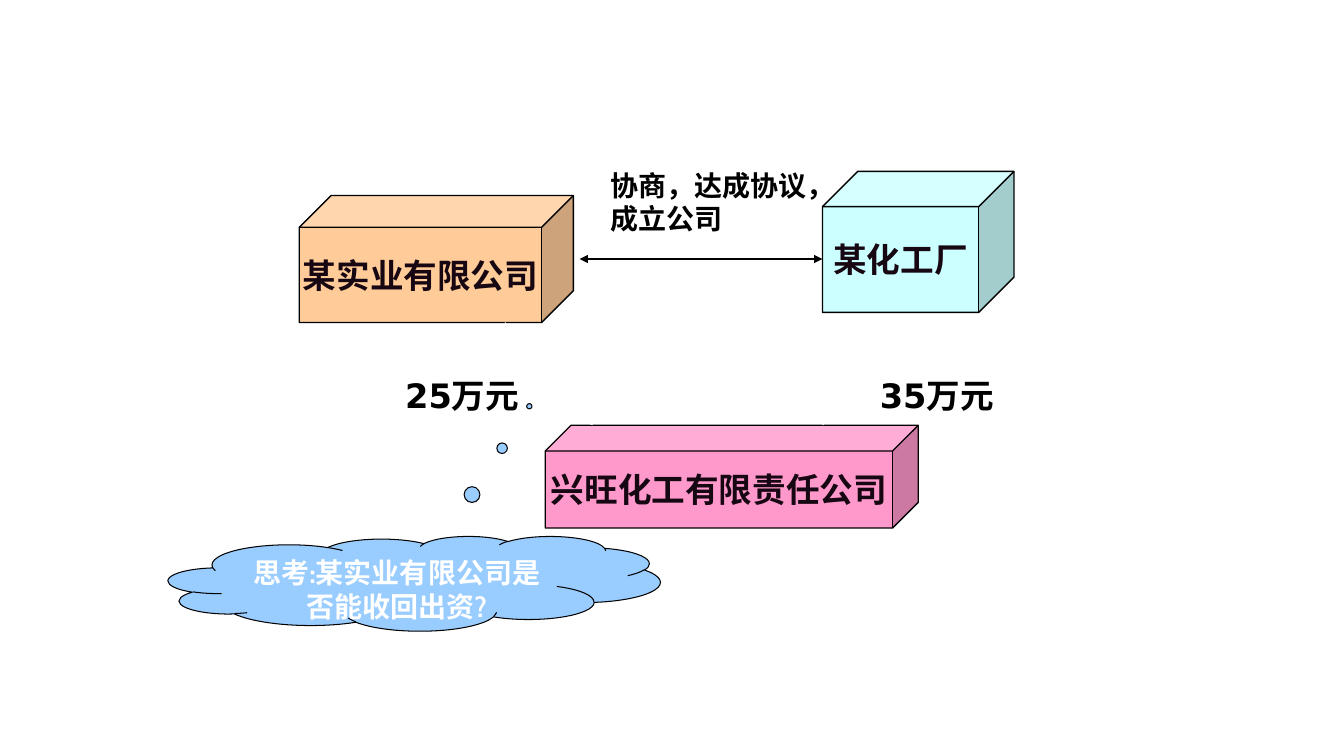
"""Build a slide on two firms that fund a new company."""
from dataclasses import dataclass
from typing import Any, Optional

from lxml import etree
from pptx import Presentation
from pptx import util as u
from pptx.dml import color
from pptx.enum import shapes, text
from pptx.oxml import ns

MID, LEFT = text.PP_ALIGN.CENTER, text.PP_ALIGN.LEFT
TOP, HALF = text.MSO_ANCHOR.TOP, text.MSO_ANCHOR.MIDDLE
CUBE, CLOUD = shapes.MSO_SHAPE.CUBE, shapes.MSO_SHAPE.CLOUD_CALLOUT
SANS, ROMAN = "DejaVu Sans", "Times New Roman"


@dataclass
class Box:
    words: str
    at: tuple[float, float, float, float]
    size: float = 24
    font: str = SANS
    ink: str = "000000"
    align: Any = MID
    kind: Any = None
    fill: str = ""
    line: float = 1
    wrap: bool = True
    anchor: Any = TOP
    adjust: tuple[float, ...] = ()


@dataclass
class Arrow:
    start: tuple[float, float]
    end: tuple[float, float]
    ink: str = "FFFFFF"
    width: float = 0.75
    ends: tuple[str, ...] = ("tailEnd",)


def firm(words: str, at: tuple[float, float, float, float], fill: str,
         font: str = ROMAN) -> Box:
    return Box(words, at, font=font, ink="170712", kind=CUBE, fill=fill,
               wrap=False, anchor=HALF, adjust=(0.25,))


FIRMS = [
    firm("某化工厂", (587.5, 122.4, 136.8, 100.8), "CCFFFF"),
    firm("某实业有限公司", (213.8, 139.7, 195.8, 90.7), "FFCC99", SANS),
    firm("兴旺化工有限责任公司", (389.5, 303.8, 266.4, 73.4), "FF99CC"),
]
ARROWS = [
    Arrow((360.7, 230.4), (423.4, 303.8)),
    Arrow((638.6, 224.6), (587.5, 303.8)),
    Arrow((414, 185), (587.5, 185), "000000", 1.5, ("headEnd", "tailEnd")),
]
NOTES = [
    Box("25万元", (270, 264.2, 120.2, 36)),
    Box("协商，达成协议，成立公司", (429.1, 116.6, 157, 55.4), 20, align=LEFT),
    Box("35万元", (621.4, 264.2, 103, 36), align=LEFT),
    Box("思考:某实业有限公司是否能收回出资?", (120.2, 383, 351.4, 67.7), 20,
        "Cabin", "FFFFFF", kind=CLOUD, fill="99CCFF", line=0.75,
        adjust=(0.234, -1.871)),
]


def paint(target: Any, ink: str) -> None:
    target.rgb = color.RGBColor.from_string(ink)


def stroke(line: Any, ink: str, width: float) -> None:
    line.fill.solid()
    paint(line.fill.fore_color, ink)
    line.width = u.Pt(width)


def assign(target: Any, values: dict[str, Any]) -> None:
    for name, value in values.items():
        setattr(target, name, value)


def draw_box(slide: Any, box: Box) -> None:
    place = [u.Pt(n) for n in box.at]
    if box.kind is None:
        shape = slide.shapes.add_textbox(*place)
    else:
        shape = slide.shapes.add_shape(box.kind, *place)
        shape.shadow.inherit = False
        shape.fill.solid()
        paint(shape.fill.fore_color, box.fill)
        stroke(shape.line, "000000", box.line)
        for i, value in enumerate(box.adjust):
            shape.adjustments[i] = value
    frame = shape.text_frame
    assign(frame, {"word_wrap": box.wrap, "vertical_anchor": box.anchor})
    para = frame.paragraphs[0]
    para.alignment = box.align
    run = para.add_run()
    run.text = box.words
    assign(run.font, {"size": u.Pt(box.size), "name": box.font, "bold": True})
    paint(run.font.color, box.ink)


def draw_arrow(slide: Any, arrow: Arrow) -> None:
    ends = [u.Pt(n) for n in arrow.start + arrow.end]
    link = slide.shapes.add_connector(shapes.MSO_CONNECTOR.STRAIGHT, *ends)
    stroke(link.line, arrow.ink, arrow.width)
    props = link.element.spPr
    for tip in arrow.ends:
        etree.SubElement(props.find(ns.qn("a:ln")), ns.qn(f"a:{tip}"),
                         type="triangle")
    etree.SubElement(props, ns.qn("a:effectLst"))


def main() -> None:
    deck = Presentation()
    assign(deck, {"slide_width": u.Pt(960), "slide_height": u.Pt(540)})
    slide = deck.slides.add_slide(deck.slide_layouts[6])
    for box in FIRMS:
        draw_box(slide, box)
    for arrow in ARROWS:
        draw_arrow(slide, arrow)
    for box in NOTES:
        draw_box(slide, box)
    deck.save("out.pptx")


if __name__ == "__main__":
    main()
